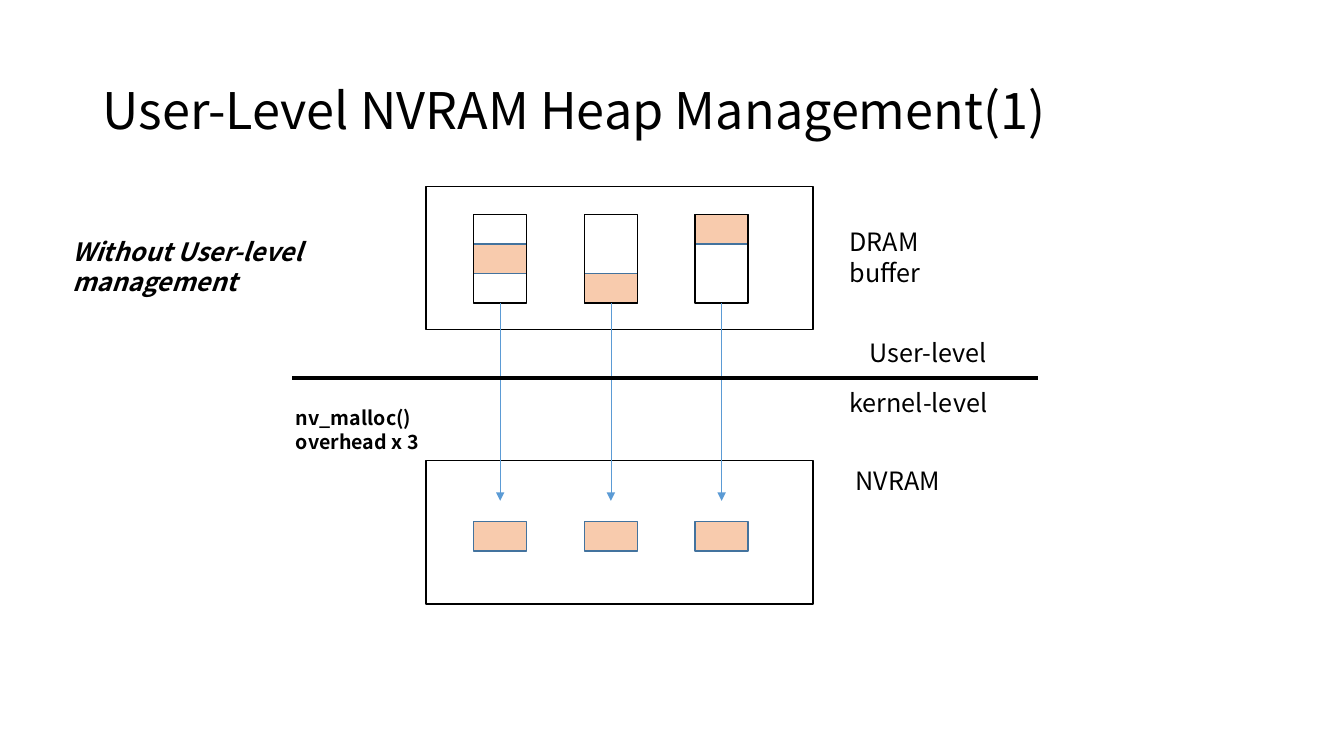
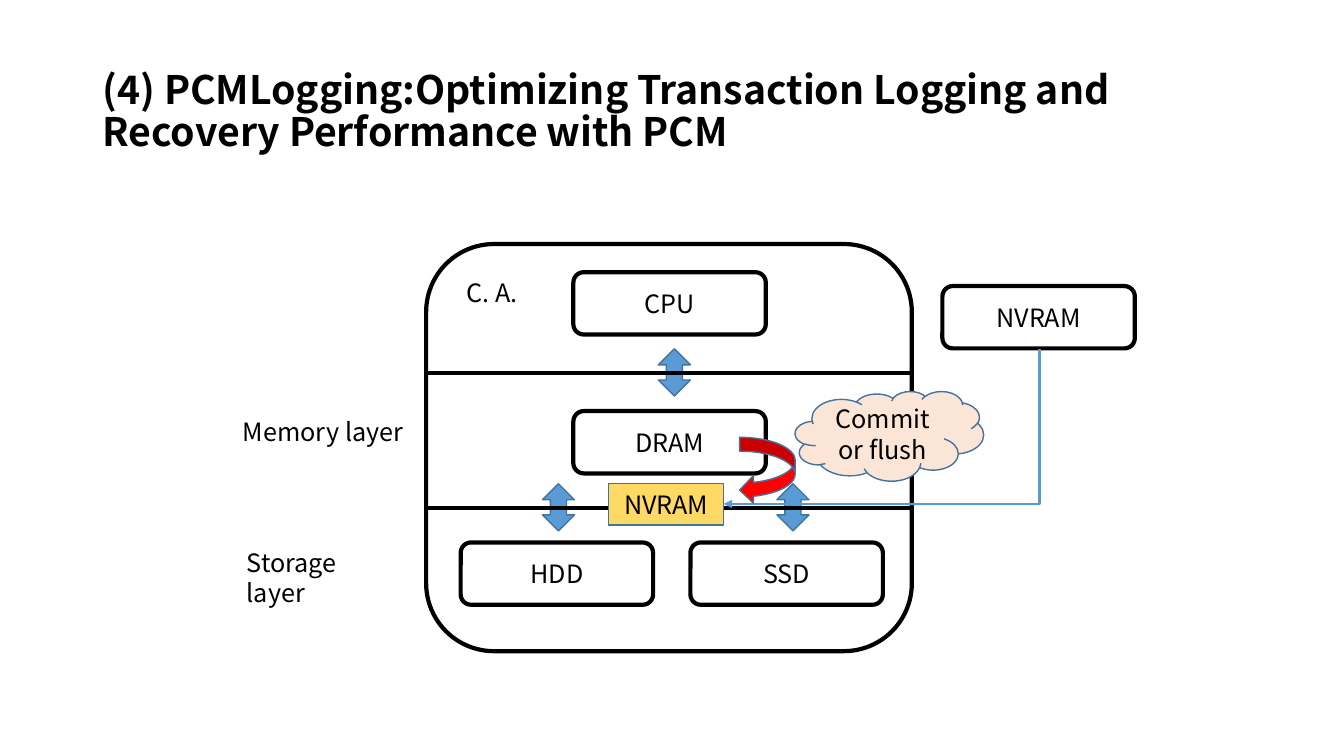
from lxml import etree
from pptx import Presentation
from pptx import util as u
from pptx.dml.color import RGBColor
from pptx.enum import shapes, text
from pptx.oxml.ns import qn

FONT = "Noto Sans CJK KR"
COLORS = {
    "ink": "000000",
    "blue": "5B9BD5",
    "edge": "43739E",
    "peach": "F8CBAD",
    "cream": "FBE5D6",
    "gold": "FFD966",
    "red": "FF0000",
}
SHAPE = shapes.MSO_SHAPE
ALIGN = text.PP_ALIGN
ANCHOR = text.MSO_ANCHOR


def rgb(name):
    return RGBColor.from_string(COLORS[name])


def write(frame, words, size=18, bold=False, italic=False, align=ALIGN.LEFT,
          anchor=ANCHOR.TOP, spacing=None):
    frame.word_wrap = True
    frame.vertical_anchor = anchor
    paragraph = frame.paragraphs[0]
    paragraph.alignment = align
    paragraph.line_spacing = spacing
    run = paragraph.add_run()
    run.text = words
    font = run.font
    font.name, font.size, font.bold, font.italic = FONT, u.Pt(size), bold, italic
    font.color.rgb = rgb("ink")
    etree.SubElement(run._r.get_or_add_rPr(), qn("a:ea"), typeface=FONT)


def add_titled_slide(deck, words, **style):
    slide = deck.slides.add_slide(deck.slide_layouts[5])
    title = slide.shapes.title
    title.left, title.top = u.Cm(2.33), u.Cm(1.01)
    title.width, title.height = u.Cm(29.21), u.Cm(3.68)
    title.text_frame.auto_size = text.MSO_AUTO_SIZE.NONE
    write(title.text_frame, words, anchor=ANCHOR.MIDDLE, spacing=0.9, **style)
    return slide


def add_label(slide, words, left, top, width, height=1.03, **style):
    label = slide.shapes.add_textbox(u.Cm(left), u.Cm(top), u.Cm(width), u.Cm(height))
    write(label.text_frame, words, **style)
    label.text_frame.auto_size = text.MSO_AUTO_SIZE.SHAPE_TO_FIT_TEXT


def add_block(slide, kind, left, top, width, height, fill=None, line="edge",
              weight=1, words=None):
    block = slide.shapes.add_shape(kind, u.Cm(left), u.Cm(top), u.Cm(width), u.Cm(height))
    block.shadow.inherit = False
    if fill:
        block.fill.solid()
        block.fill.fore_color.rgb = rgb(fill)
    else:
        block.fill.background()
    block.line.color.rgb = rgb(line)
    block.line.width = u.Pt(weight)
    if words:
        write(block.text_frame, words, align=ALIGN.CENTER, anchor=ANCHOR.MIDDLE)


def add_line(slide, x1, y1, x2, y2, color="ink", weight=2.5, arrow=False):
    line = slide.shapes.add_connector(
        shapes.MSO_CONNECTOR.STRAIGHT, u.Cm(x1), u.Cm(y1), u.Cm(x2), u.Cm(y2))
    line.line.color.rgb = rgb(color)
    line.line.width = u.Pt(weight)
    if arrow:
        etree.SubElement(line.line._get_or_add_ln(), qn("a:tailEnd"), type="triangle")
    etree.SubElement(line._element.spPr, qn("a:effectLst"))
    return line


def add_down_left_arrow(slide, x1, y1, x2, y2, **style):
    across, down = x1 - x2, y2 - y1
    middle_x, middle_y = (x1 + x2) / 2, (y1 + y2) / 2
    arrow = add_line(slide, middle_x - down / 2, middle_y - across / 2,
                     middle_x + down / 2, middle_y + across / 2, arrow=True, **style)
    properties = arrow._element.spPr
    properties.find(qn("a:xfrm")).set("rot", "5400000")
    properties.find(qn("a:prstGeom")).set("prst", "bentConnector2")


def add_node(slide, words, left, top):
    add_block(slide, SHAPE.ROUNDED_RECTANGLE, left, top, 4.85, 1.57,
              line="ink", weight=3, words=words)


def build_heap_slide(deck):
    slide = add_titled_slide(deck, "User-Level NVRAM Heap Management(1)", size=36)
    for area_top in (4.7, 11.61):
        add_block(slide, SHAPE.RECTANGLE, 10.74, area_top, 9.75, 3.61, line="ink")

    page_top, page_width, page_height = 5.4, 1.33, 2.24
    slot = page_height / 3
    for column, used_slot in enumerate((1, 2, 0)):
        left = 11.94 + 2.79 * column
        center = left + page_width / 2
        add_block(slide, SHAPE.RECTANGLE, left, page_top + used_slot * slot,
                  page_width, slot, fill="peach")
        add_block(slide, SHAPE.RECTANGLE, left, page_top, page_width, page_height, line="ink")
        add_line(slide, center, page_top + page_height, center, 12.62,
                 color="blue", weight=0.5, arrow=True)
        add_block(slide, SHAPE.RECTANGLE, left, 13.14, page_width, slot, fill="peach")

    add_line(slide, 7.37, 9.52, 26.16, 9.52, weight=3)
    add_label(slide, "DRAM buffer", 21.16, 5.59, 3.15, 1.8)
    add_label(slide, "NVRAM", 21.31, 11.61, 3.15)
    add_label(slide, "User-level", 21.67, 8.38, 5.05)
    add_label(slide, "kernel-level", 21.16, 9.63, 4.01)
    add_label(slide, "Without User-level management", 1.57, 5.82, 7.04, 1.8,
              bold=True, italic=True)
    add_label(slide, "nv_malloc() overhead x 3", 7.21, 10.11, 4.27, 1.45,
              size=14, bold=True)


def build_logging_slide(deck):
    slide = add_titled_slide(
        deck,
        "(4) PCMLogging:Optimizing Transaction Logging and Recovery Performance with PCM",
        size=28, bold=True)
    for words, left, top in (("DRAM", 14.45, 10.36), ("HDD", 11.61, 13.67),
                             ("SSD", 17.4, 13.67), ("CPU", 14.45, 6.86),
                             ("NVRAM", 23.75, 7.21)):
        add_node(slide, words, left, top)
    add_block(slide, SHAPE.ROUNDED_RECTANGLE, 10.74, 6.15, 12.24, 10.26,
              line="ink", weight=3)
    for left, top in ((16.59, 8.79), (13.67, 12.19), (19.58, 12.19)):
        add_block(slide, SHAPE.UP_DOWN_ARROW, left, top, 0.81, 1.19, fill="blue")
    for layer_edge in (9.4, 12.8):
        add_line(slide, 10.74, layer_edge, 22.98, layer_edge)
    add_down_left_arrow(slide, 26.19, 8.79, 18.24, 12.7, color="blue", weight=2)

    add_label(slide, "C. A.", 11.51, 6.86, 2.06)
    add_label(slide, "Memory layer", 5.87, 10.36, 4.85)
    add_label(slide, "Storage layer", 5.97, 13.67, 3.6)
    add_block(slide, SHAPE.RECTANGLE, 15.34, 12.19, 2.9, 1.04, fill="gold", words="NVRAM")
    add_block(slide, SHAPE.CLOUD, 20.04, 9.86, 4.75, 2.26, fill="cream",
              words="Commit or flush")
    add_block(slide, SHAPE.CURVED_LEFT_ARROW, 18.64, 11.02, 1.4, 1.68, fill="red")


def main():
    deck = Presentation()
    deck.slide_width, deck.slide_height = u.Cm(33.87), u.Cm(19.05)
    build_heap_slide(deck)
    build_logging_slide(deck)
    deck.save("out.pptx")


if __name__ == "__main__":
    main()
